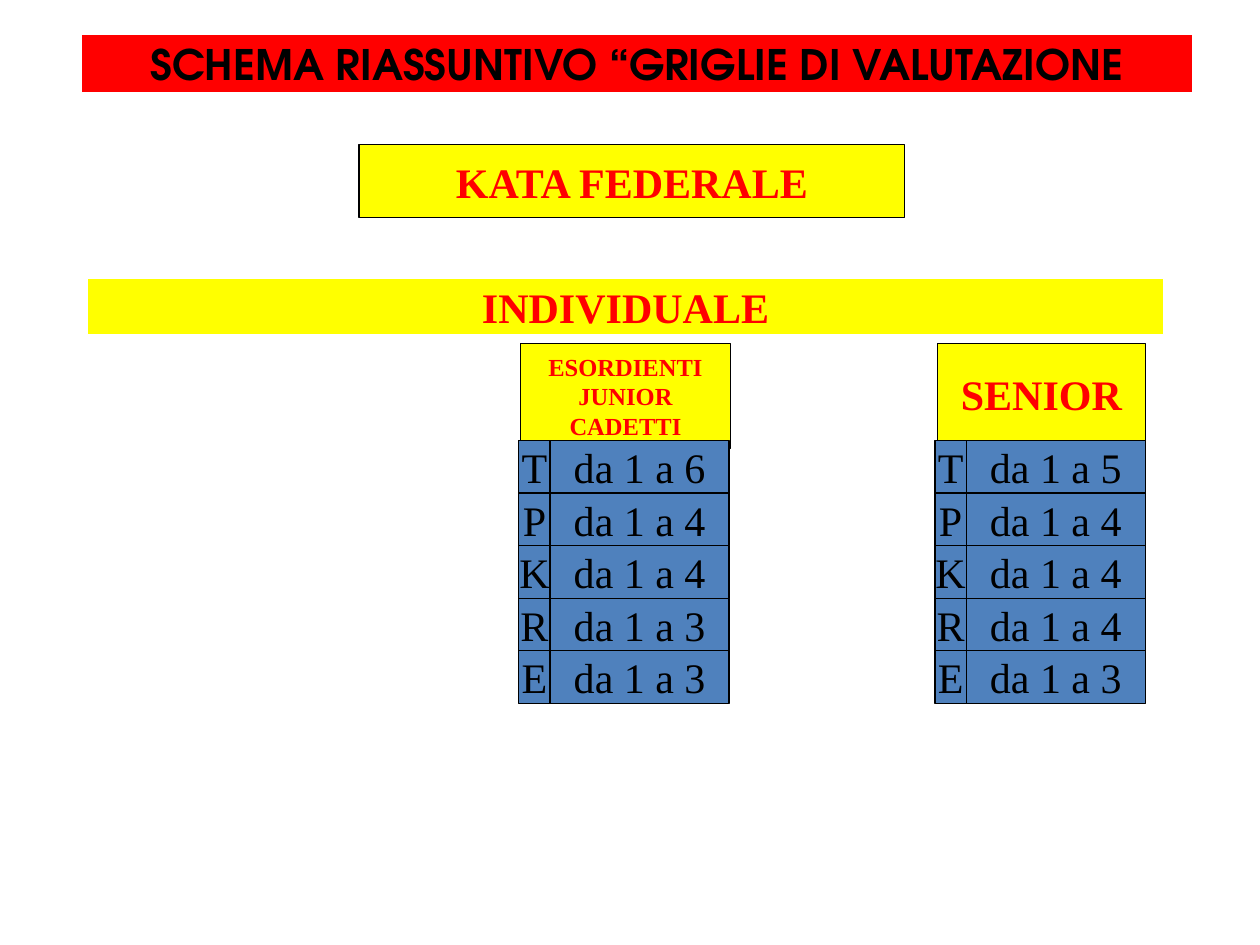
import pptx
import pptx.util
import pptx.dml.color
import pptx.enum.shapes
import pptx.enum.text

Cm = pptx.util.Cm
Pt = pptx.util.Pt


def rgb(value):
    return pptx.dml.color.RGBColor.from_string(value)


def format_box(sp, text, box, fill, line, width, color, size=24, bold=True,
               font="Times New Roman", wrap=False):
    sp.left, sp.top, sp.width, sp.height = [Cm(v) for v in box]
    sp.fill.solid()
    sp.fill.fore_color.rgb = rgb(fill)
    sp.line.color.rgb = rgb(line)
    sp.line.width = Pt(width)
    tf = sp.text_frame
    tf.text = text
    tf.word_wrap = wrap
    tf.auto_size = pptx.enum.text.MSO_AUTO_SIZE.NONE
    tf.vertical_anchor = pptx.enum.text.MSO_ANCHOR.MIDDLE
    for p in tf.paragraphs:
        p.alignment = pptx.enum.text.PP_ALIGN.CENTER
        for r in p.runs:
            r.font.name = font
            r.font.size = Pt(size)
            r.font.bold = bold
            r.font.color.rgb = rgb(color)


prs = pptx.Presentation()
prs.slide_width = Cm(25.4)
prs.slide_height = Cm(19.05)
s = prs.slides.add_slide(prs.slide_layouts[5])

format_box(s.shapes.title, "SCHEMA RIASSUNTIVO “GRIGLIE DI VALUTAZIONE",
           (1.57, 0.63, 22.53, 1.3), "FF0000", "FFFFFF", 4.5, "000000",
           font="TeX Gyre Adventor", wrap=True)

rect = pptx.enum.shapes.MSO_SHAPE.RECTANGLE
headings = [
    ("KATA FEDERALE", (7.24, 2.92, 11, 1.47), "000000", 0.75, 24),
    ("INDIVIDUALE", (1.7, 5.54, 21.82, 1.27), "FFFFFF", 4.5, 24),
    ("ESORDIENTI\nJUNIOR\nCADETTI", (10.49, 6.93, 4.24, 2.11), "000000", 0.75, 14),
    ("SENIOR", (18.9, 6.93, 4.19, 2.01), "000000", 0.75, 24),
]
for text, box, line, width, size in headings:
    sp = s.shapes.add_shape(rect, 0, 0, 0, 0)
    sp.shadow.inherit = False
    format_box(sp, text, box, "FFFF00", line, width, "FF0000", size)

row_top, row_height = 8.88, 1.06
letter_width, value_width = 0.63, 3.61
grids = [(10.46, [6, 4, 4, 3, 3]), (18.85, [5, 4, 4, 4, 3])]
for left, maxima in grids:
    for i, (letter, maximum) in enumerate(zip("TPKRE", maxima)):
        top = row_top + i * row_height
        cells = [(letter, left, letter_width),
                 (f"da 1 a {maximum}", left + letter_width, value_width)]
        for text, x, w in cells:
            sp = s.shapes.add_shape(rect, 0, 0, 0, 0)
            sp.shadow.inherit = False
            format_box(sp, text, (x, top, w, row_height), "4F81BD", "000000",
                       0.75, "000000", bold=False)

prs.save("out.pptx")
